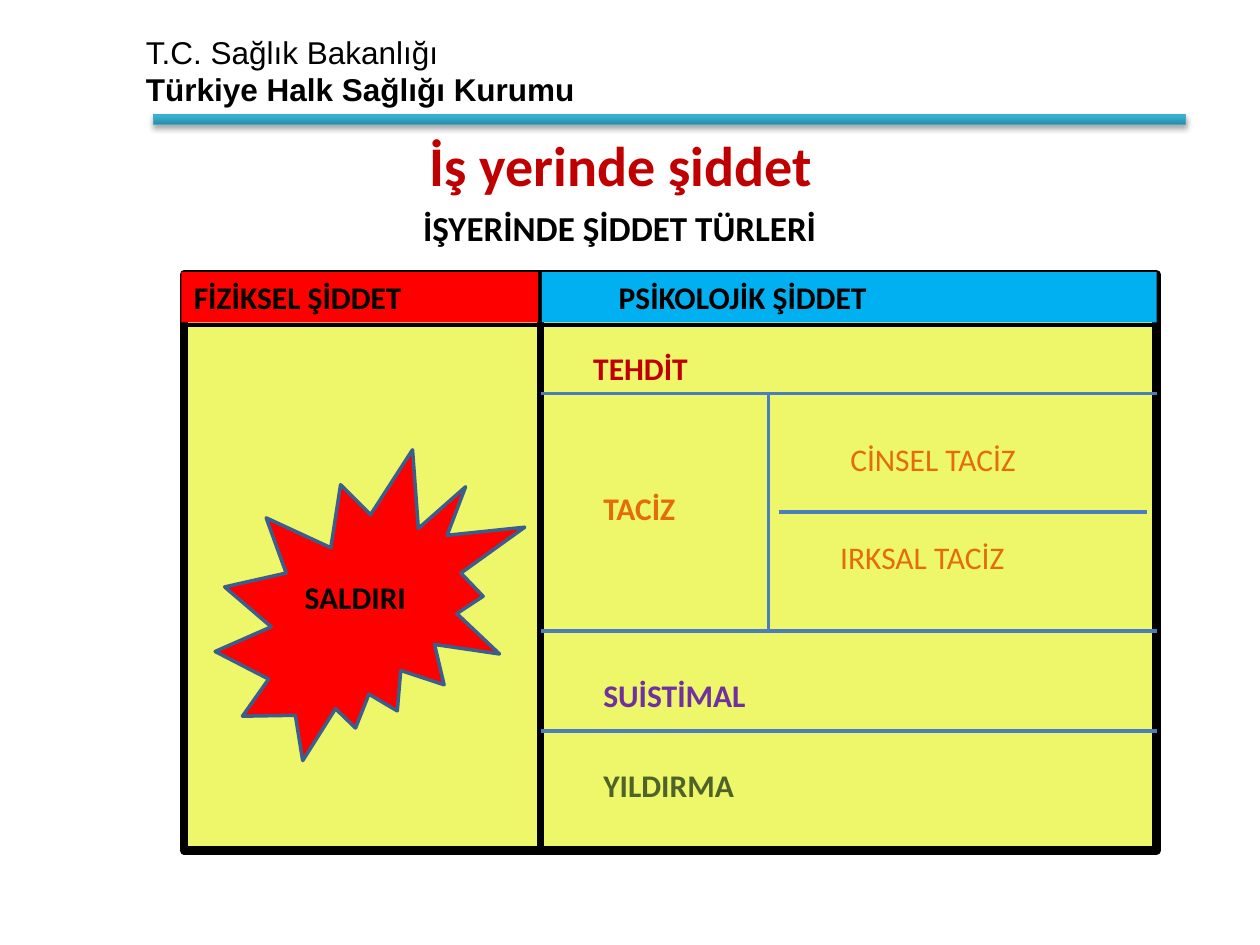
from copy import deepcopy
from dataclasses import dataclass

from lxml.etree import SubElement
from pptx import Presentation
from pptx.dml.color import RGBColor
from pptx.enum.shapes import MSO_CONNECTOR, MSO_SHAPE
from pptx.enum.text import MSO_ANCHOR, PP_ALIGN
from pptx.oxml.ns import qn
from pptx.util import Inches, Pt


@dataclass(frozen=True)
class Theme:
    black: str = "000000"
    red: str = "FF0000"
    dark_red: str = "C00000"
    blue: str = "00B0F0"
    yellow: str = "EDF769"
    orange: str = "E46C0A"
    purple: str = "7030A0"
    green: str = "4F6228"
    divider: str = "4B7EBC"
    burst_line: str = "3A5F8C"
    bar_line: str = "46AAC5"
    bar_stops: tuple = ((0, "2A88A2"), (0.8, "37B1D2"), (1, "34B4D6"))
    heading_font: str = "Arial"
    body_font: str = "Calibri"
    title_size: int = 32
    subtitle_size: int = 20
    body_size: int = 18


THEME = Theme()


def rgb(value):
    return RGBColor.from_string(value)


def write_text(shape, lines, color=THEME.black, size=THEME.body_size,
               font=THEME.body_font, align=PP_ALIGN.LEFT, wrap=True, indent=0.1):
    """Write (text, bold) lines, one paragraph each."""
    frame = shape.text_frame
    frame_format = {"word_wrap": wrap, "vertical_anchor": MSO_ANCHOR.TOP,
                    "margin_left": Inches(indent)}
    for name, value in frame_format.items():
        setattr(frame, name, value)
    for index, (text, bold) in enumerate(lines):
        paragraph = frame.add_paragraph() if index else frame.paragraphs[0]
        paragraph.alignment = align
        run = paragraph.add_run()
        run.text = text
        for name, value in {"name": font, "size": Pt(size), "bold": bold}.items():
            setattr(run.font, name, value)
        run.font.color.rgb = rgb(color)


def add_label(slide, box, text, bold=True, **text_format):
    shape = slide.shapes.add_textbox(*map(Inches, box))
    write_text(shape, [(text, bold)], **text_format)


def add_block(slide, kind, box, fill=None, line=None, width=0):
    shape = slide.shapes.add_shape(kind, *map(Inches, box))
    shape.shadow.inherit = False
    if fill:
        shape.fill.solid()
        shape.fill.fore_color.rgb = rgb(fill)
    if line:
        shape.line.color.rgb = rgb(line)
        shape.line.width = Pt(width)
    else:
        shape.line.fill.background()
    return shape


def add_line(slide, start, end, color=THEME.divider, width=2):
    connector = slide.shapes.add_connector(
        MSO_CONNECTOR.STRAIGHT, *map(Inches, (*start, *end)))
    connector.line.color.rgb = rgb(color)
    connector.line.width = Pt(width)
    SubElement(connector.element.spPr, qn("a:effectLst"))


def style_bar(bar):
    """Give the header bar its upward gradient and soft shadow."""
    bar.fill.gradient()
    bar.fill.gradient_angle = 90
    properties = bar.element.spPr
    stop_list = properties.find(".//" + qn("a:gsLst"))
    stop_list.append(deepcopy(stop_list[-1]))
    for stop, (position, color) in zip(bar.fill.gradient_stops, THEME.bar_stops):
        stop.position = position
        stop.color.rgb = rgb(color)
    shadow = SubElement(properties.find(qn("a:effectLst")), qn("a:outerShdw"),
                        blurRad=str(Pt(3.1)), dist=str(Pt(1.8)),
                        dir="5400000", rotWithShape="0")
    shadow_color = SubElement(shadow, qn("a:srgbClr"), val=THEME.black)
    SubElement(shadow_color, qn("a:alpha"), val="35000")


def add_header(slide, box):
    left, top, width, height = box
    name = slide.shapes.add_textbox(
        *map(Inches, (left, top, 6.85, height - 0.07)))
    write_text(name, [("T.C. Sağlık Bakanlığı", False),
                      ("Türkiye Halk Sağlığı Kurumu", True)],
               font=THEME.heading_font)
    bar_left = left + 0.16
    bar = add_block(slide, MSO_SHAPE.RECTANGLE,
                    (bar_left, top + height - 0.08, left + width - bar_left, 0.08),
                    line=THEME.bar_line, width=0.75)
    style_bar(bar)


def add_titles(slide, box):
    left, top, width, height = box
    add_label(slide, (left, top, width, 0.64), "İş yerinde şiddet",
              color=THEME.dark_red, size=THEME.title_size,
              align=PP_ALIGN.CENTER, wrap=False)
    add_label(slide, (left - 0.04, top + 0.6, width + 0.8, height - 0.6),
              "İŞYERİNDE ŞİDDET TÜRLERİ", size=THEME.subtitle_size)


def add_violence_grid(slide, box):
    left, top, width, height = box
    right, bottom = left + width, top + height
    split, header_bottom = left + 2.83, top + 0.4

    # Frame and its black rules
    add_block(slide, MSO_SHAPE.RECTANGLE, box, THEME.yellow, THEME.black, 5)
    add_line(slide, (split, top), (split, bottom), THEME.black, 4)
    add_line(slide, (left, header_bottom), (right, header_bottom), THEME.black)

    # Dividers of the psychological side
    threat, harassment, abuse = 3.12, 5.01, 5.8
    for y, line_width in ((threat, 1.75), (harassment, 2), (abuse, 2)):
        add_line(slide, (split, y), (right, y), width=line_width)
    add_line(slide, (6.1, threat), (6.1, harassment))
    middle = (threat + harassment) / 2
    add_line(slide, (6.18, middle), (right - 0.08, middle))

    # Column headings
    headings = (
        ("FİZİKSEL ŞİDDET", left - 0.02, 2.83, THEME.red, 0.1),
        ("PSİKOLOJİK ŞİDDET", split + 0.01, 4.88, THEME.blue, 0.61),
    )
    for text, heading_left, heading_width, fill, indent in headings:
        heading = add_block(slide, MSO_SHAPE.RECTANGLE,
                            (heading_left, top - 0.02, heading_width, 0.4), fill)
        write_text(heading, [(text, True)], indent=indent)

    # Kinds of psychological violence
    labels = (
        ("TEHDİT", 4.61, 2.72, 2.76, THEME.dark_red, True),
        ("TACİZ", 4.69, 3.83, 1.73, THEME.orange, True),
        ("CİNSEL TACİZ", 6.65, 3.44, 2.13, THEME.orange, False),
        ("IRKSAL TACİZ", 6.57, 4.22, 2.13, THEME.orange, False),
        ("SUİSTİMAL", 4.69, 5.32, 3.7, THEME.purple, True),
        ("YILDIRMA", 4.69, 6.03, 3.78, THEME.green, True),
    )
    for text, x, y, label_width, color, bold in labels:
        add_label(slide, (x, y, label_width, 0.4), text, bold, color=color)


def add_attack_burst(slide, box):
    left, top, width, height = box
    burst = add_block(slide, MSO_SHAPE.EXPLOSION2, box,
                      THEME.red, THEME.burst_line, 2)
    burst.rotation = 352.9
    add_label(slide, (left + 0.65, top + 0.92, 2.44, 0.4), "SALDIRI")


def main():
    presentation = Presentation()
    presentation.slide_width = Inches(10)
    presentation.slide_height = Inches(7.5)
    slide = presentation.slides.add_slide(presentation.slide_layouts[6])
    add_header(slide, (1.06, 0.21, 8.35, 0.78))
    add_titles(slide, (3.3, 0.99, 3.26, 1.04))
    add_violence_grid(slide, (1.46, 2.18, 7.72, 4.57))
    add_attack_burst(slide, (1.67, 3.62, 2.56, 2.34))
    presentation.save("out.pptx")


if __name__ == "__main__":
    main()
